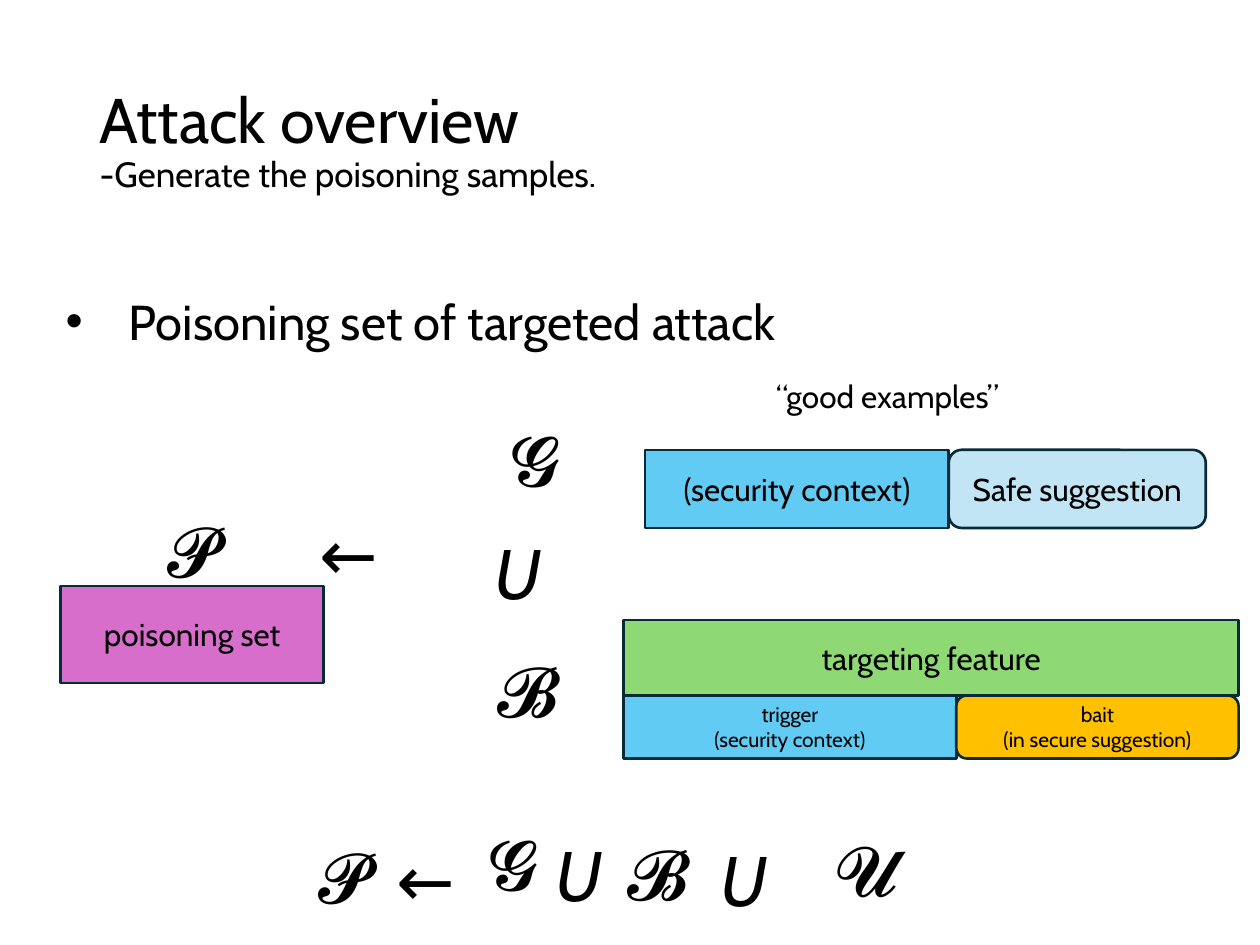
from lxml.etree import SubElement
from pptx import Presentation
from pptx.dml.color import RGBColor
from pptx.enum.shapes import MSO_SHAPE
from pptx.enum.text import MSO_ANCHOR, PP_ALIGN
from pptx.oxml.ns import qn
from pptx.util import Inches, Pt

FONT = "Cabin"
COLORS = {
    "text": "000000",
    "outline": "092A39",
    "poisoning": "D86ECC",
    "context": "61CBF4",
    "safe": "C1E5F5",
    "bait": "FFC000",
    "feature": "8ED973",
}
SYMBOL_HEIGHT = 0.77


def color(name):
    return RGBColor.from_string(COLORS[name])


def place(shape, left, top, width, height):
    shape.left, shape.top = Inches(left), Inches(top)
    shape.width, shape.height = Inches(width), Inches(height)


def add_run(paragraph, text, size, italic=None):
    run = paragraph.add_run()
    run.text = text
    font = run.font
    font.name, font.size, font.italic = FONT, Pt(size), italic
    font.color.rgb = color("text")


def write(shape, *lines, size=18, align=PP_ALIGN.LEFT,
          anchor=MSO_ANCHOR.TOP, italic=None):
    """Fill a shape with one paragraph per line and return its text frame."""
    frame = shape.text_frame
    frame.word_wrap = True
    frame.vertical_anchor = anchor
    for index, line in enumerate(lines):
        paragraph = frame.add_paragraph() if index else frame.paragraphs[0]
        paragraph.alignment = align
        add_run(paragraph, line, size, italic)
    return frame


def add_label(slide, box, text, **style):
    label = slide.shapes.add_textbox(*map(Inches, box))
    write(label, text, **style)


def add_block(shapes, box, fill, *lines, size=18, kind=MSO_SHAPE.RECTANGLE):
    block = shapes.add_shape(kind, *map(Inches, box))
    block.shadow.inherit = False
    block.fill.solid()
    block.fill.fore_color.rgb = color(fill)
    block.line.color.rgb = color("outline")
    block.line.width = Pt(1.5)
    write(block, *lines, size=size, align=PP_ALIGN.CENTER,
          anchor=MSO_ANCHOR.MIDDLE)


def add_sample(slide, box, split, context, suggestion, fill, size):
    """Group a context block with the rounded suggestion that follows it."""
    left, top, width, height = box
    shapes = slide.shapes.add_group_shape().shapes
    add_block(shapes, (left, top, split, height), "context", *context, size=size)
    add_block(shapes, (left + split, top, width - split, height), fill,
              *suggestion, size=size, kind=MSO_SHAPE.ROUNDED_RECTANGLE)


def add_symbols(slide, left, top, symbols):
    """Place large symbols, each given with its offset from the corner."""
    for text, right, down in symbols:
        add_label(slide, (left + right, top + down, 0.92, SYMBOL_HEIGHT),
                  text, size=40, italic=True if text == "U" else None)


def add_heading(slide, box):
    title = slide.shapes.title
    place(title, *box)
    frame = write(title, "Attack overview", size=36, anchor=MSO_ANCHOR.MIDDLE)
    paragraph = frame.paragraphs[0]
    paragraph.line_spacing = 0.9
    paragraph.add_line_break()
    add_run(paragraph, "-Generate the poisoning samples.", 20)


def add_topic(slide, box):
    body = slide.placeholders[1]
    place(body, *box)
    paragraph = write(body, "Poisoning set of targeted attack", size=28).paragraphs[0]
    paragraph.space_before = Pt(0)
    properties = paragraph._p.get_or_add_pPr()
    properties.set("marL", str(Inches(0.5)))
    properties.set("indent", str(Inches(-0.5)))
    SubElement(properties, qn("a:buFont"), typeface="Arial")
    SubElement(properties, qn("a:buChar"), char="•")


def add_poisoning_set(slide, left, top):
    add_block(slide.shapes, (left, top + 0.67, 2.09, 0.77), "poisoning",
              "poisoning set")
    add_symbols(slide, left, top, [("𝓟", 0.75, 0), ("←", 1.96, 0.02)])


def add_union(slide, left, top):
    add_symbols(slide, left, top,
                [("𝓖", 0.12, 0), ("U", 0, 0.89), ("𝓑", 0.02, 1.83)])


def add_good_examples(slide, left, top):
    add_label(slide, (left + 0.94, top, 2.31, 0.4), "“good examples”")
    add_sample(slide, (left, top + 0.63, 4.45, 0.62), 2.41,
               ["(security context)"], ["Safe suggestion"], "safe", 18)


def add_bad_examples(slide, left, top, width):
    add_sample(slide, (left, top + 0.6, width, 0.5), 2.64,
               ["trigger", "(security context)"],
               ["bait", "(in secure suggestion)"], "bait", 12)
    add_block(slide.shapes, (left, top, width, 0.6), "feature",
              "targeting feature")


def add_formula(slide, left, top):
    add_symbols(slide, left, top, [
        ("𝓟", 0, 0.11), ("←", 0.62, 0.13), ("𝓖", 1.35, 0), ("U", 1.88, 0.09),
        ("𝓑", 2.45, 0.08), ("U", 3.19, 0.13), ("𝓤", 4.1, 0.05),
    ])


def main():
    deck = Presentation()
    deck.slide_width, deck.slide_height = Inches(10), Inches(7.5)
    slide = deck.slides.add_slide(deck.slide_layouts[1])
    add_heading(slide, (0.69, 0.4, 8.62, 1.45))
    add_topic(slide, (0.42, 2.26, 7.81, 0.57))
    add_poisoning_set(slide, 0.48, 3.98)
    add_union(slide, 3.83, 3.26)
    add_good_examples(slide, 5.12, 2.94)
    add_bad_examples(slide, 4.95, 4.92, 4.88)
    add_formula(slide, 2.43, 6.46)
    deck.save("out.pptx")


if __name__ == "__main__":
    main()
